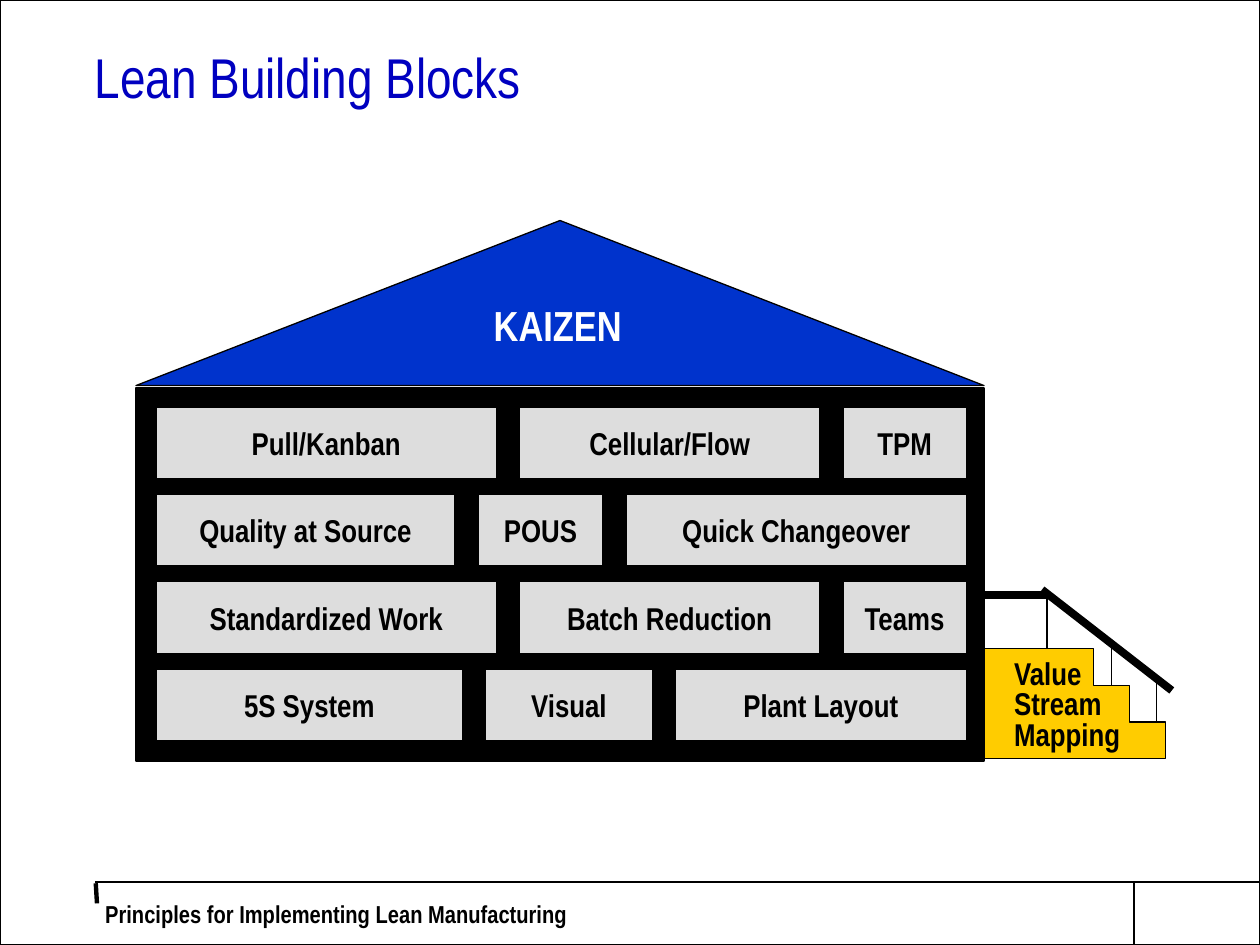
from lxml.etree import SubElement
from pptx import Presentation
from pptx.dml.color import RGBColor
from pptx.enum.shapes import MSO_CONNECTOR as Conn, MSO_SHAPE as Shape
from pptx.enum.text import MSO_ANCHOR as Anchor, PP_ALIGN as Align
from pptx.oxml.ns import qn
from pptx.util import Inches, Pt

COLS, ROWS = 100, 75
CELL = Inches(0.1)
FONT = "Arial Narrow"
COLORS = {"ink": "000000", "title": "0000C0", "roof": "0033CC",
          "brick": "DDDDDD", "steps": "FFCC00", "light": "FFFFFF"}

BRICKS = [
    [("Pull/Kanban", 27.2), ("Cellular/Flow", 24), ("TPM", 10)],
    [("Quality at Source", 23.9), ("POUS", 10), ("Quick Changeover", 27.2)],
    [("Standardized Work", 27.2), ("Batch Reduction", 24), ("Teams", 10)],
    [("5S System", 24.5), ("Visual", 13.5), ("Plant Layout", 23.3)],
]
BRICK_LEFT, BRICK_RIGHT, BRICK_TOP = 12.3, 76.8, 32.2
BRICK_H, BRICK_PITCH = 5.9, 6.93

HOUSE_LEFT, HOUSE_W = 10.8, 67.3
STEP_LEFT, STEP_TOP, STEP_H, STEP_W = 78.1, 51.5, 2.9, 2.85
FIRST_TREAD, STEP_COUNT = 8.7, 3

FOOTER_LINES = [((100, 70), (7.5, 70), 0.75), ((90, 70), (90, 75), 0.75),
                ((7.6, 70.1), (7.7, 71.7), 2.5)]
POSTS = [(91.8, 53.7), (88.2, 50.8), (83.1, 47.5)]
POST_H = 4
RAILS = [((77.4, 47.2), (83.1, 47.2), 4.5), ((82.7, 46.8), (93, 54.8), 4.5)]


def grid(*values):
    return [int(v * CELL) for v in values]


def rgb(name):
    return RGBColor.from_string(COLORS[name])


def paint(sp, fill, width):
    sp.shadow.inherit = False
    if fill:
        sp.fill.solid()
        sp.fill.fore_color.rgb = rgb(fill)
    else:
        sp.fill.background()
    sp.line.color.rgb = rgb("ink")
    sp.line.width = Pt(width)


def add_box(kind, at, fill=None, width=0.75):
    sp = slide.shapes.add_shape(kind, *grid(*at))
    paint(sp, fill, width)
    return sp


def add_line(start, end, width):
    cn = slide.shapes.add_connector(Conn.STRAIGHT, *grid(*start, *end))
    cn.line.color.rgb = rgb("ink")
    cn.line.width = Pt(width)
    SubElement(cn._element.spPr, qn("a:effectLst"))


def write(sp, text, size=18, color="ink", bold=True, align=Align.LEFT,
          anchor=Anchor.TOP, spacing=None, insets=(1, 0.5, 1, 0.5), wrap=True):
    tf = sp.text_frame
    tf.word_wrap = wrap
    tf.vertical_anchor = anchor
    tf.margin_left, tf.margin_top, tf.margin_right, tf.margin_bottom = grid(*insets)
    for i, line in enumerate(text.split("\n")):
        p = tf.add_paragraph() if i else tf.paragraphs[0]
        p.alignment = align
        if spacing:
            p.line_spacing = spacing
        r = p.add_run()
        r.text = line
        r.font.name, r.font.size, r.font.bold = FONT, Pt(size), bold
        r.font.color.rgb = rgb(color)


def add_text(text, at, **fmt):
    write(slide.shapes.add_textbox(*grid(*at)), text, **fmt)


prs = Presentation()
prs.slide_width, prs.slide_height = grid(COLS, ROWS)
slide = prs.slides.add_slide(prs.slide_layouts[6])

for start, end, width in FOOTER_LINES:
    add_line(start, end, width)
add_box(Shape.RECTANGLE, (0, 0, COLS, ROWS))
add_text("Principles for Implementing Lean Manufacturing", (7.5, 70, 48.2, 5),
         size=14, anchor=Anchor.MIDDLE, insets=(0.85, 0, 0, 0))
add_text("Lean Building Blocks", (7.5, 4, 72.5, 12.5), size=32, color="title",
         bold=False, spacing=0.9, insets=(0, 0, 0, 0))

add_box(Shape.ISOSCELES_TRIANGLE, (HOUSE_LEFT, 17.5, HOUSE_W, 13.1), "roof")
add_box(Shape.RECTANGLE, (HOUSE_LEFT, 30.8, HOUSE_W, 29.6), "ink")
for row, bricks in enumerate(BRICKS):
    gap = (BRICK_RIGHT - BRICK_LEFT - sum(w for _, w in bricks)) / (len(bricks) - 1)
    x = BRICK_LEFT
    for label, w in bricks:
        sp = add_box(Shape.RECTANGLE, (x, BRICK_TOP + row * BRICK_PITCH, w, BRICK_H),
                     "brick", 2.25)
        write(sp, label, align=Align.CENTER, anchor=Anchor.MIDDLE)
        x += w + gap

for x, y in POSTS:
    add_line((x, y), (x, y + POST_H), 0.75)
outline = [(STEP_LEFT, STEP_TOP)]
for i in range(STEP_COUNT):
    edge = STEP_LEFT + FIRST_TREAD + i * STEP_W
    outline += [(edge, STEP_TOP + i * STEP_H), (edge, STEP_TOP + (i + 1) * STEP_H)]
outline.append((STEP_LEFT, STEP_TOP + STEP_COUNT * STEP_H))
points = [grid(*pt) for pt in outline]
fb = slide.shapes.build_freeform(*points[0])
fb.add_line_segments(points[1:], close=True)
paint(fb.convert_to_shape(), "steps", 0.75)
add_text("Value\nStream\nMapping", (79.5, 52, 11.7, 8.5), spacing=0.8, wrap=False)
for start, end, width in RAILS:
    add_line(start, end, width)

add_text("KAIZEN", (38.2, 23.3, 12.2, 5), size=24, color="light", wrap=False)

prs.save("out.pptx")
